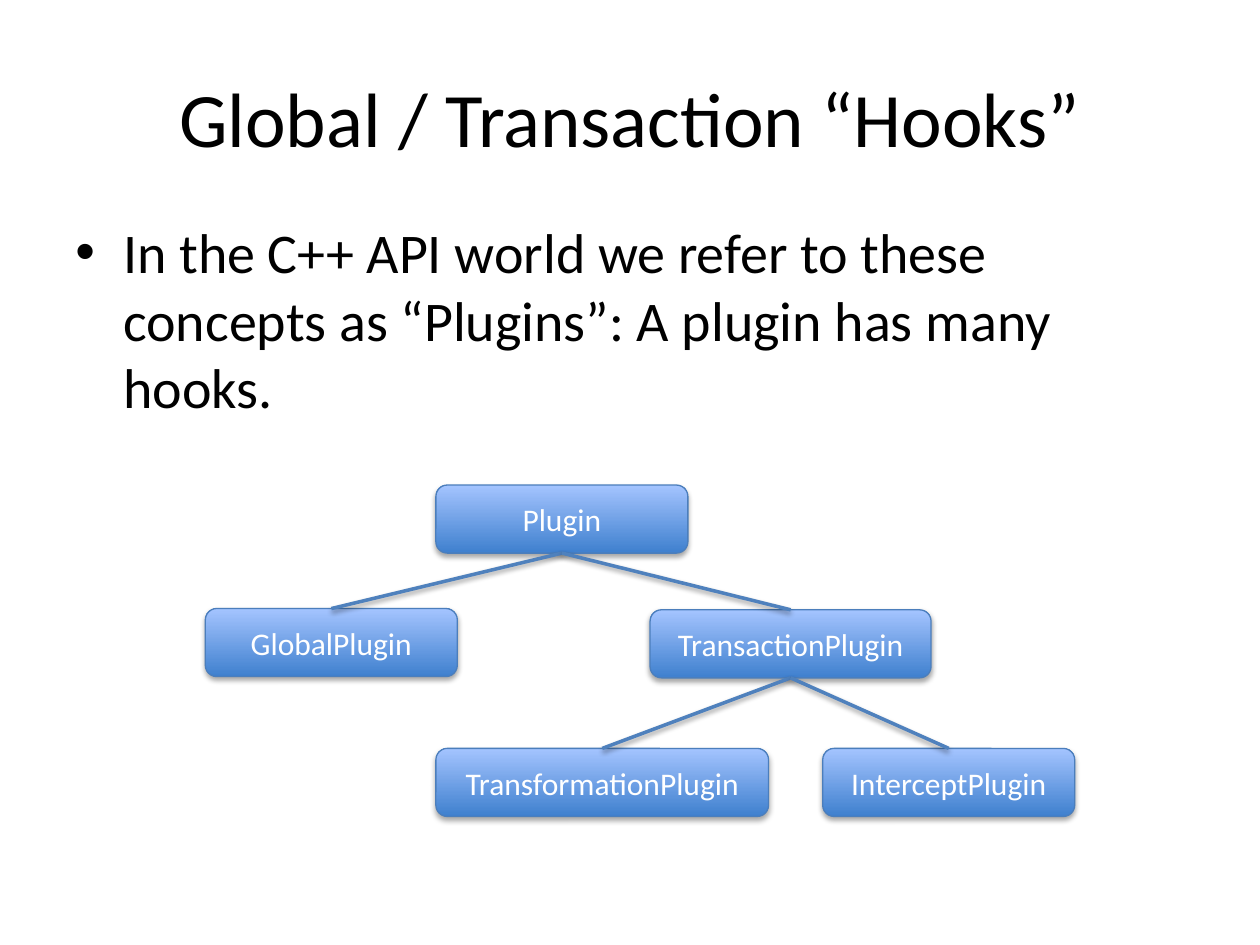
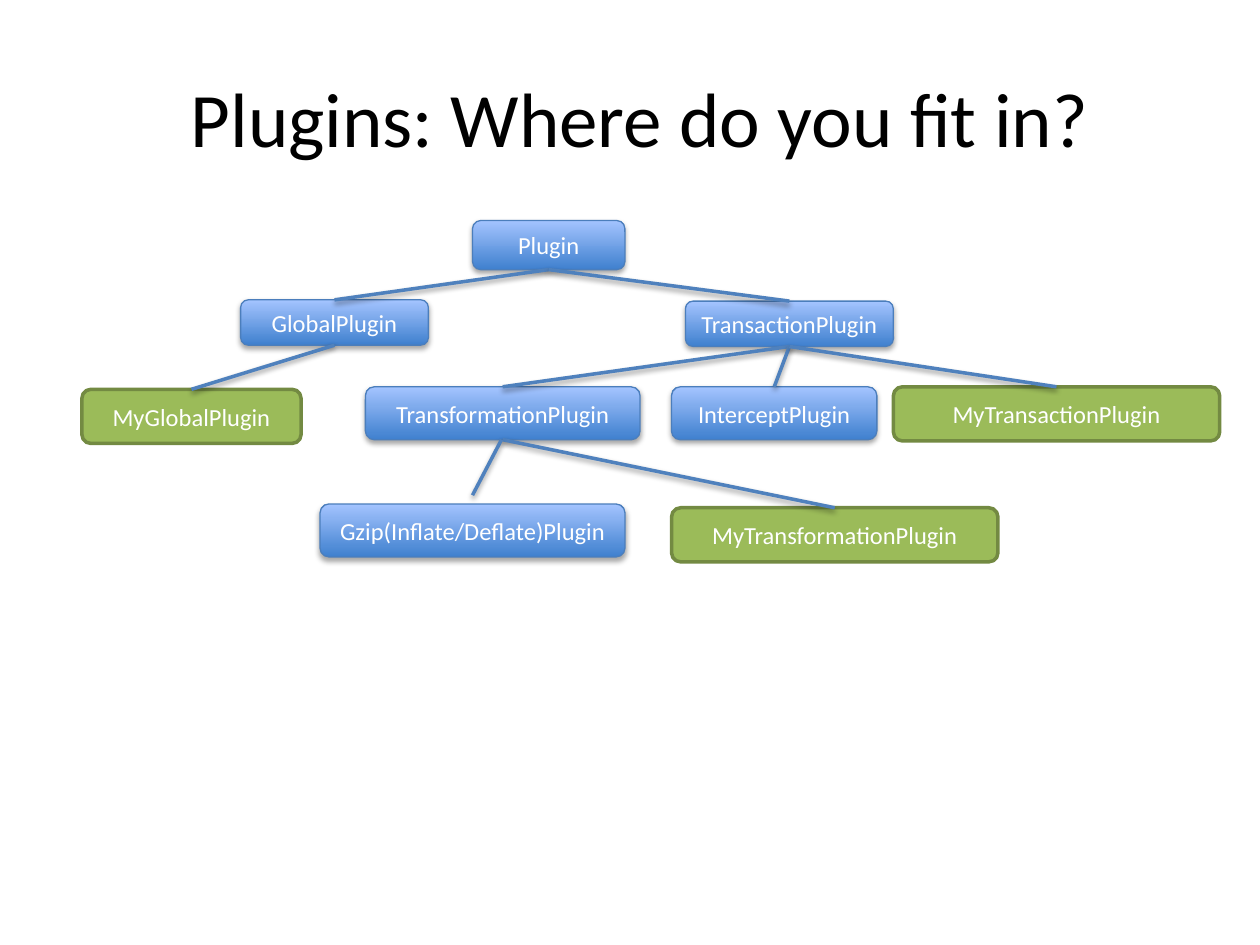
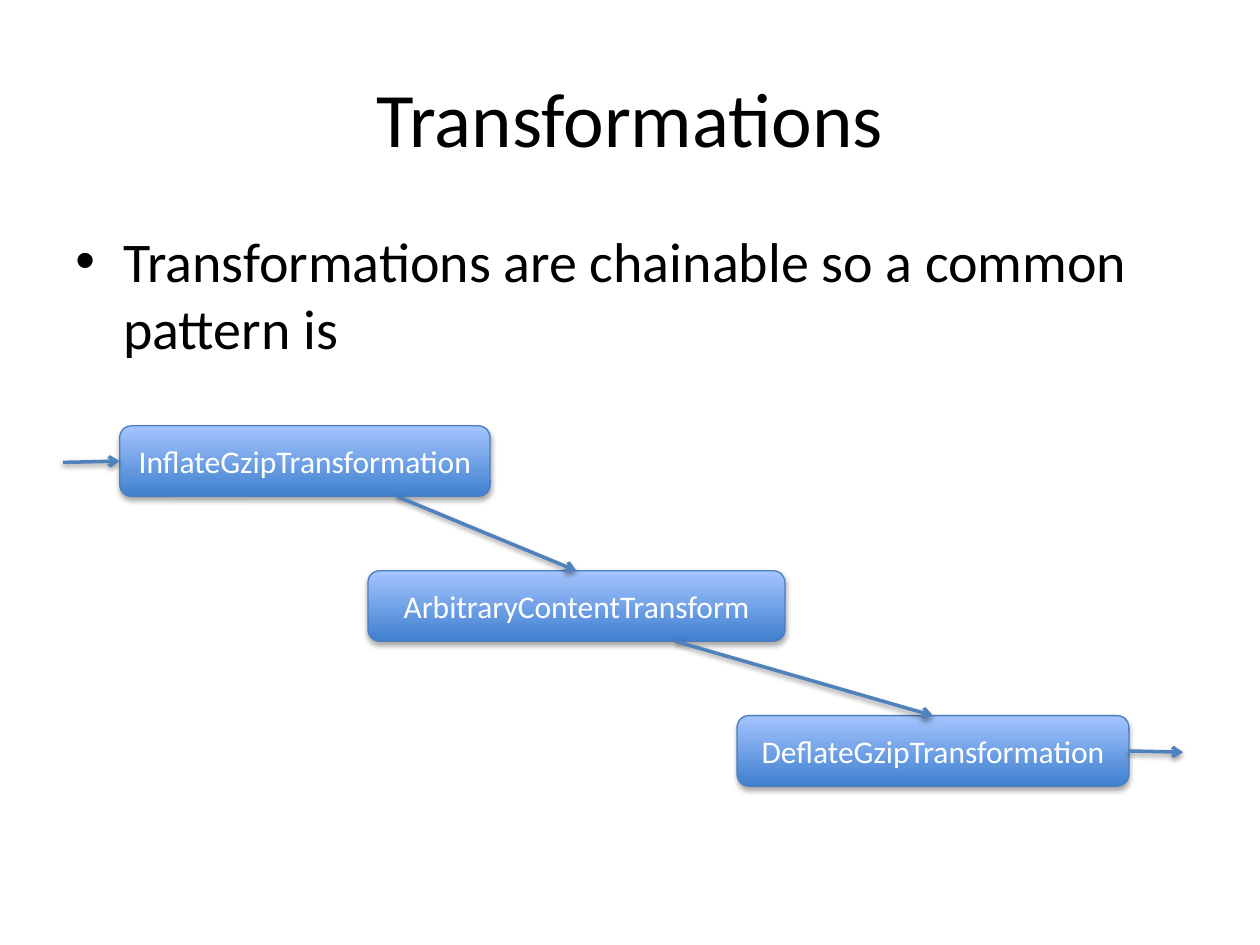
"""Build three slides on plugin classes and transformations."""
from dataclasses import dataclass

from lxml.etree import SubElement
from pptx import Presentation
from pptx.dml.color import RGBColor
from pptx.enum.shapes import MSO_CONNECTOR, MSO_SHAPE
from pptx.enum.text import MSO_ANCHOR, PP_ALIGN
from pptx.oxml.ns import qn
from pptx.shapes.autoshape import Shape
from pptx.shapes.connector import Connector
from pptx.slide import Slide
from pptx.util import Inches, Pt

FONT = "Calibri"
COLORS = {
    "text": "000000",
    "label": "FFFFFF",
    "low": "3F80CE",
    "high": "A4C4FF",
    "edge": "4B7EBC",
    "wire": "4F81BD",
    "green": "9BBB59",
    "rim": "738A42",
}
TOP, BOTTOM = 0, 2
Point = tuple[float, float]


@dataclass(frozen=True)
class Box:
    """A class box, with its place and size in inches."""
    text: str
    left: float
    top: float
    width: float
    height: float
    own: bool = False


def color(name: str) -> RGBColor:
    """Look up a shared colour."""
    return RGBColor.from_string(COLORS[name])


def write(frame, text: str, size: float, ink: str, align: PP_ALIGN):
    """Put one run in the first paragraph and return the paragraph."""
    para = frame.paragraphs[0]
    para.alignment = align
    run = para.add_run()
    run.text = text
    run.font.name = FONT
    run.font.size = Pt(size)
    run.font.color.rgb = color(ink)
    return para


def shade(props, dist: float, alpha: int) -> None:
    """Cast a soft black shadow straight down."""
    effects = props.find(qn("a:effectLst"))
    if effects is None:
        effects = SubElement(props, qn("a:effectLst"))
    outer = SubElement(effects, qn("a:outerShdw"), blurRad=str(Pt(3.1)),
                       dist=str(Pt(dist)), dir="5400000", rotWithShape="0")
    black = SubElement(outer, qn("a:srgbClr"), val="000000")
    SubElement(black, qn("a:alpha"), val=str(alpha * 1000))


def start(deck, text: str, left: float = 0.5) -> Slide:
    """Add a slide with the shared title style."""
    slide = deck.slides.add_slide(deck.slide_layouts[5])
    title = slide.shapes.title
    title.left, title.top = Inches(left), Inches(0.3)
    title.width, title.height = Inches(9), Inches(1.25)
    title.text_frame.vertical_anchor = MSO_ANCHOR.MIDDLE
    write(title.text_frame, text, 44, "text", PP_ALIGN.CENTER)
    return slide


def bullet(slide: Slide, text: str, top: float) -> None:
    """Add the bulleted body text."""
    body = slide.shapes.add_textbox(Inches(0.5), Inches(top), Inches(9), Inches(4.95))
    body.text_frame.word_wrap = True
    para = write(body.text_frame, text, 32, "text", PP_ALIGN.LEFT)
    para.space_before = Pt(6.4)
    props = para._p.get_or_add_pPr()
    props.set("marL", str(Inches(0.38)))
    props.set("indent", str(Inches(-0.38)))
    SubElement(props, qn("a:buFont"), typeface="Arial")
    SubElement(props, qn("a:buChar"), char="•")


def draw(slide: Slide, box: Box, size: float) -> Shape:
    """Draw a class box, green if it is your own class."""
    shape = slide.shapes.add_shape(
        MSO_SHAPE.ROUNDED_RECTANGLE, Inches(box.left), Inches(box.top),
        Inches(box.width), Inches(box.height))
    shape.shadow.inherit = False
    if box.own:
        shape.fill.solid()
        shape.fill.fore_color.rgb = color("green")
    else:
        shape.fill.gradient()
        shape.fill.gradient_angle = 90
        for stop, name in zip(shape.fill.gradient_stops, ("low", "high")):
            stop.color.rgb = color(name)
        shade(shape._element.spPr, 1.8, 35)
    shape.line.color.rgb = color("rim" if box.own else "edge")
    shape.line.width = Pt(2 if box.own else 0.75)
    shape.text_frame.vertical_anchor = MSO_ANCHOR.MIDDLE
    write(shape.text_frame, box.text, size, "label", PP_ALIGN.CENTER)
    return shape


def wire(slide: Slide, tail: Point, head: Point, arrow: bool = False) -> Connector:
    """Draw a line between two points."""
    line = slide.shapes.add_connector(
        MSO_CONNECTOR.STRAIGHT, *(Inches(v) for v in (*tail, *head)))
    line.line.color.rgb = color("wire")
    line.line.width = Pt(2)
    if arrow:
        SubElement(line.get_or_add_ln(), qn("a:tailEnd"), type="arrow")
    shade(line._element.spPr, 1.6, 38)
    return line


def tree(slide: Slide, boxes: list[Box], links: list[tuple[str, str]], size: float) -> None:
    """Draw boxes and join each parent to its child."""
    nodes = {box.text: draw(slide, box, size) for box in boxes}
    for parent, child in links:
        line = wire(slide, (0, 0), (1, 1))
        line.begin_connect(nodes[parent], BOTTOM)
        line.end_connect(nodes[child], TOP)


BASE = [
    ("Plugin", "GlobalPlugin"),
    ("Plugin", "TransactionPlugin"),
    ("TransactionPlugin", "TransformationPlugin"),
    ("TransactionPlugin", "InterceptPlugin"),
]


def hooks(deck) -> None:
    """Show the base plugin classes."""
    slide = start(deck, "Global / Transaction “Hooks”")
    bullet(slide, "In the C++ API world we refer to these concepts as "
                  "“Plugins”: A plugin has many hooks.", 1.68)
    tree(slide, [
        Box("Plugin", 3.46, 3.85, 2, 0.54),
        Box("GlobalPlugin", 1.63, 4.83, 2, 0.54),
        Box("TransactionPlugin", 5.16, 4.84, 2.23, 0.54),
        Box("TransformationPlugin", 3.46, 5.94, 2.64, 0.54),
        Box("InterceptPlugin", 6.53, 5.94, 2, 0.54),
    ], BASE, 18)


def places(deck) -> None:
    """Show where your own classes fit in the tree."""
    slide = start(deck, "Plugins: Where do you fit in?", 0.58)
    tree(slide, [
        Box("Plugin", 3.75, 1.75, 1.21, 0.39),
        Box("GlobalPlugin", 1.91, 2.38, 1.49, 0.36),
        Box("TransactionPlugin", 5.44, 2.39, 1.65, 0.36),
        Box("TransformationPlugin", 2.9, 3.07, 2.18, 0.42),
        Box("InterceptPlugin", 5.33, 3.07, 1.63, 0.42),
        Box("Gzip(Inflate/Deflate)Plugin", 2.54, 4, 2.42, 0.42),
        Box("MyGlobalPlugin", 0.65, 3.09, 1.74, 0.43, True),
        Box("MyTransformationPlugin", 5.33, 4.03, 2.59, 0.43, True),
        Box("MyTransactionPlugin", 7.09, 3.07, 2.59, 0.43, True),
    ], BASE + [
        (name, f"My{name}")
        for name in ("GlobalPlugin", "TransformationPlugin", "TransactionPlugin")
    ], 14)
    wire(slide, (3.98, 3.49), (3.75, 3.93))


def chain(deck) -> None:
    """Show a chain of transformations."""
    slide = start(deck, "Transformations")
    bullet(slide, "Transformations are chainable so a common pattern is", 1.75)
    steps = [
        ("InflateGzipTransformation", 0.95, 2.94),
        ("ArbitraryContentTransform", 2.92, 3.31),
        ("DeflateGzipTransformation", 5.85, 3.11),
    ]
    boxes = [Box(text, left, 3.38 + 1.15 * row, width, 0.56)
             for row, (text, left, width) in enumerate(steps)]
    for box in boxes:
        draw(slide, box, 18)
    for exit_x, box, after in zip((3.15, 5.36), boxes, boxes[1:]):
        wire(slide, (exit_x, box.top + box.height),
             (after.left + after.width / 2, after.top), True)
    wire(slide, (0.5, 3.67), (0.95, 3.66), True)
    wire(slide, (8.96, 5.96), (9.39, 5.97), True)


def main() -> None:
    """Build and save the deck."""
    deck = Presentation()
    deck.slide_width, deck.slide_height = Inches(10), Inches(7.5)
    for build in (hooks, places, chain):
        build(deck)
    deck.save("out.pptx")


if __name__ == "__main__":
    main()
